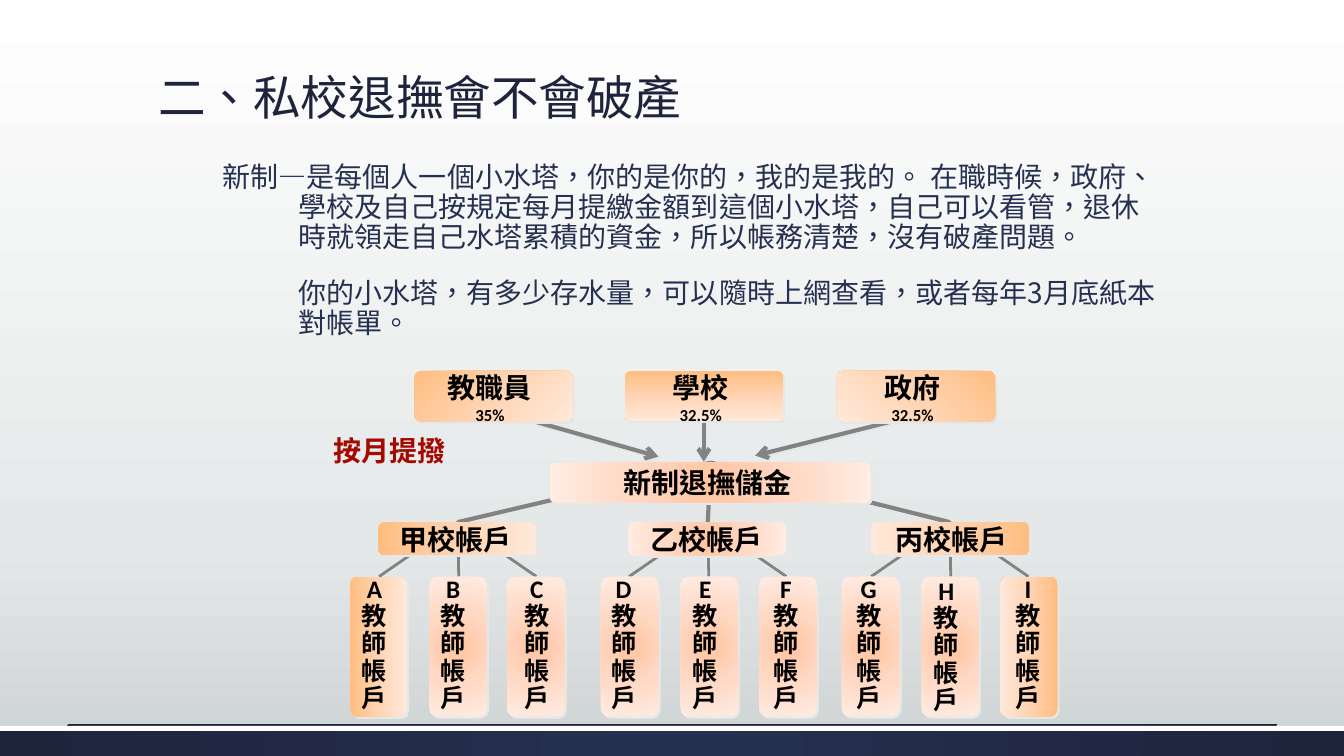
import pptx
import pptx.util
import pptx.dml.color
import pptx.enum.shapes
import pptx.enum.text
import pptx.oxml
import pptx.oxml.ns
from pptx.util import Inches

NOTO = "Noto Sans CJK SC"
ALIGN = pptx.enum.text.PP_ALIGN
SHAPE = pptx.enum.shapes.MSO_SHAPE
NAVY, INK, GREY = "1D243C", "263050", "838383"
ORANGE = [(0, "FFBD80"), (50, "FFD4B3"), (100, "FFE9DA")]
PEACH = [(0, "FFC4A0"), (50, "FFD9C5"), (100, "FFECE3")]
NS = pptx.oxml.ns.nsdecls("a")
qn = pptx.oxml.ns.qn


def rgb(value):
    """Turn a hex string into a colour."""
    return pptx.dml.color.RGBColor.from_string(value)


def set_gradient(fill, element, stops, angle=None):
    """Fill with a linear gradient, or a radial one when no angle is given."""
    fill.solid()
    solid = next(element.iter(qn("a:solidFill")))
    gs = "".join(f'<a:gs pos="{pos * 1000}"><a:srgbClr val="{color}"/></a:gs>'
                 for pos, color in stops)
    if angle is None:
        way = ('<a:path path="circle"><a:fillToRect l="50000" t="50000" '
               'r="50000" b="50000"/></a:path>')
    else:
        way = f'<a:lin ang="{angle * 60000}" scaled="0"/>'
    xml = f'<a:gradFill {NS} rotWithShape="1"><a:gsLst>{gs}</a:gsLst>{way}</a:gradFill>'
    solid.getparent().replace(solid, pptx.oxml.parse_xml(xml))


def set_effects(element, shadow=True):
    """Give a shape or connector a small hard shadow, or none."""
    spPr = element.spPr
    for old in spPr.findall(qn("a:effectLst")):
        spPr.remove(old)
    inner = ('<a:outerShdw blurRad="0" dist="25400" dir="2700000" algn="ctr" '
             'rotWithShape="0"><a:srgbClr val="E5E8E8"/></a:outerShdw>') if shadow else ""
    spPr.append(pptx.oxml.parse_xml(f"<a:effectLst {NS}>{inner}</a:effectLst>"))


def add_text(p, text, size=20, font="Calibri", color="000000", bold=True,
             align=ALIGN.CENTER, spacing=None, before=0):
    """Write one formatted run into a paragraph."""
    p.alignment = align
    p.space_before = pptx.util.Pt(before)
    if spacing:
        p.line_spacing = spacing
    r = p.add_run()
    r.text = text
    r.font.size = pptx.util.Pt(size)
    r.font.bold = bold
    r.font.name = font
    r.font.color.rgb = rgb(color)
    rPr = r.font._element
    rPr.set("lang", "zh-TW")
    rPr.find(qn("a:latin")).addnext(
        pptx.oxml.parse_xml(f'<a:ea {NS} typeface="{font}"/>'))


def set_frame(tf, left=0, top=0, right=0.05, bottom=0):
    """Set wrapping, top anchoring and insets of a text frame."""
    tf.word_wrap = True
    tf.auto_size = pptx.enum.text.MSO_AUTO_SIZE.NONE
    tf.vertical_anchor = pptx.enum.text.MSO_ANCHOR.TOP
    tf.margin_left, tf.margin_top = Inches(left), Inches(top)
    tf.margin_right, tf.margin_bottom = Inches(right), Inches(bottom)


def add_label(shapes, box, *lines, **fmt):
    """Add a text box; each line is a text and its size."""
    tf = shapes.add_textbox(*map(Inches, box)).text_frame
    set_frame(tf)
    for i, (text, size) in enumerate(lines):
        p = tf.add_paragraph() if i else tf.paragraphs[0]
        add_text(p, text, size=size, **fmt)


def add_box(shapes, box, stops, angle=None, radius=0.06):
    """Add a shadowed rounded box with a gradient."""
    sp = shapes.add_shape(SHAPE.ROUNDED_RECTANGLE, *map(Inches, box))
    sp.adjustments[0] = radius / min(box[2:])
    sp.line.fill.background()
    set_gradient(sp.fill, sp._element, stops, angle)
    set_effects(sp._element)


def add_line(shapes, start, end, width, color=GREY, arrow=False, shadow=True):
    """Add a straight line, with an arrowhead at its end if asked."""
    line = shapes.add_connector(pptx.enum.shapes.MSO_CONNECTOR.STRAIGHT,
                                *map(Inches, start + end))
    line.line.color.rgb = rgb(color)
    line.line.width = pptx.util.Pt(width)
    if arrow:
        line.line._get_or_add_ln().append(
            pptx.oxml.parse_xml(f'<a:tailEnd {NS} type="arrow"/>'))
    set_effects(line._element, shadow)


def add_footer(s):
    """Draw the band and rules along the bottom edge."""
    for height, color in ((0.3, None), (0.05, "FFFFFF")):
        sp = s.shapes.add_shape(SHAPE.RECTANGLE, 0, Inches(7.2), Inches(13.33), Inches(height))
        sp.line.fill.background()
        sp.shadow.inherit = False
        if color:
            sp.fill.solid()
            sp.fill.fore_color.rgb = rgb(color)
        else:
            set_gradient(sp.fill, sp._element, [(0, INK), (100, NAVY)])
    add_line(s.shapes, (0.67, 7.19), (12.67, 7.19), 0.5, NAVY, shadow=False)


def add_title(s, text):
    """Place and format the title."""
    title = s.shapes.title
    title.left, title.top, title.width, title.height = map(Inches, (1.47, 0.51, 10.4, 1.35))
    set_frame(title.text_frame, 0.1, 0.23, 0.1, 0.05)
    add_text(title.text_frame.paragraphs[0], text, size=34, font=NOTO, color=NAVY,
             bold=False, align=ALIGN.LEFT, spacing=0.9)


def add_body(s, paragraphs):
    """Add the explanation; only its first line hangs out to the left."""
    tf = s.shapes.add_textbox(*map(Inches, (1.07, 1.57, 10.4, 2.11))).text_frame
    set_frame(tf, 0.1, 0.05, 0, 0.05)
    for i, text in enumerate(paragraphs):
        p = tf.add_paragraph() if i else tf.paragraphs[0]
        add_text(p, text, font=NOTO, color=INK, bold=False, align=ALIGN.LEFT,
                 spacing=0.9, before=18 if i else 0)
        pPr = p._p.get_or_add_pPr()
        pPr.set("marL", str(Inches(1.79)))
        pPr.set("indent", str(0 if i else -Inches(0.75)))


def add_fund_chart(shapes):
    """Draw payers, fund, school accounts and teacher accounts."""
    payers = [("教職員", "35%", 4.11, 4.31, 45, (5.05, 4.11), (6.53, 4.53)),
              ("學校", "32.5%", 6.2, 6.4, 90, (6.98, 3.95), (6.98, 4.58)),
              ("政府", "32.5%", 8.3, 8.5, 135, (9.41, 4.04), (7.49, 4.52))]
    schools = [("甲校帳戶", 3.75, 3.84, 4.54, ORANGE, 0),
               ("乙校帳戶", 6.23, 6.33, 7.02, PEACH, None),
               ("丙校帳戶", 8.64, 8.76, 9.42, ORANGE, 180)]
    teachers = {"A": (3.47, 3.53), "B": (4.26, 4.31), "C": (5.03, 5.14),
                "D": (5.96, 6), "E": (6.75, 6.81), "F": (7.53, 7.61),
                "G": (8.35, 8.43), "H": (9.14, 9.2), "I": (9.92, 10.01)}
    edge_angles = {"A": 0, "I": 180}

    for *_, start, end in payers:
        add_line(shapes, start, end, 3, arrow=True)
    for _, _, _, middle, _, _ in schools:
        add_line(shapes, (7.05, 4.59), (middle, 5.18), 3)
        for offset in (-0.78, 0.01, 0.78):
            add_line(shapes, (middle, 5.18), (middle + offset, 5.72), 2)

    for name, share, left, text_left, angle, _, _ in payers:
        add_box(shapes, (left, 3.68, 1.57, 0.5), ORANGE, angle)
        add_label(shapes, (text_left, 3.68, 1.15, 0.5), (name, 20), (share, 12))
    add_box(shapes, (5.45, 4.59, 3.19, 0.4), PEACH)
    add_label(shapes, (5.45, 4.62, 3.19, 0.27), ("新制退撫儲金", 20))
    for name, left, text_left, _, stops, angle in schools:
        add_box(shapes, (left, 5.18, 1.57, 0.33), stops, angle)
        add_label(shapes, (text_left, 5.18, 1.41, 0.27), (name, 20))
    for name, (left, text_left) in teachers.items():
        stops = ORANGE if name in edge_angles else PEACH
        add_box(shapes, (left, 5.72, 0.57, 1.39), stops, edge_angles.get(name), radius=0.08)
        top = 5.74 if name == "H" else 5.72
        add_label(shapes, (text_left, top, 0.42, 0.99), (name, 18), ("教師帳戶", 18),
                  spacing=0.9)
    add_label(shapes, (3.15, 4.3, 1.48, 0.27), ("按月提撥", 20), color="A40800")


def main():
    """Build and save the slide."""
    prs = pptx.Presentation()
    prs.slide_width, prs.slide_height = Inches(13.33), Inches(7.5)
    s = prs.slides.add_slide(prs.slide_layouts[5])
    set_gradient(s.background.fill, s._element,
                 [(0, "FFFFFF"), (72, "E5E8E8"), (100, "CDD2D2")], 90)
    add_footer(s)
    add_title(s, "二、私校退撫會不會破產")
    add_body(s, ["新制—是每個人一個小水塔，你的是你的，我的是我的。 在職時候，政府、"
                 "學校及自己按規定每月提繳金額到這個小水塔，自己可以看管，退休"
                 "時就領走自己水塔累積的資金，所以帳務清楚，沒有破產問題。",
                 "你的小水塔，有多少存水量，可以隨時上網查看，或者每年3月底紙本對帳單。"])
    add_fund_chart(s.shapes.add_group_shape().shapes)
    prs.save("out.pptx")


if __name__ == "__main__":
    main()
